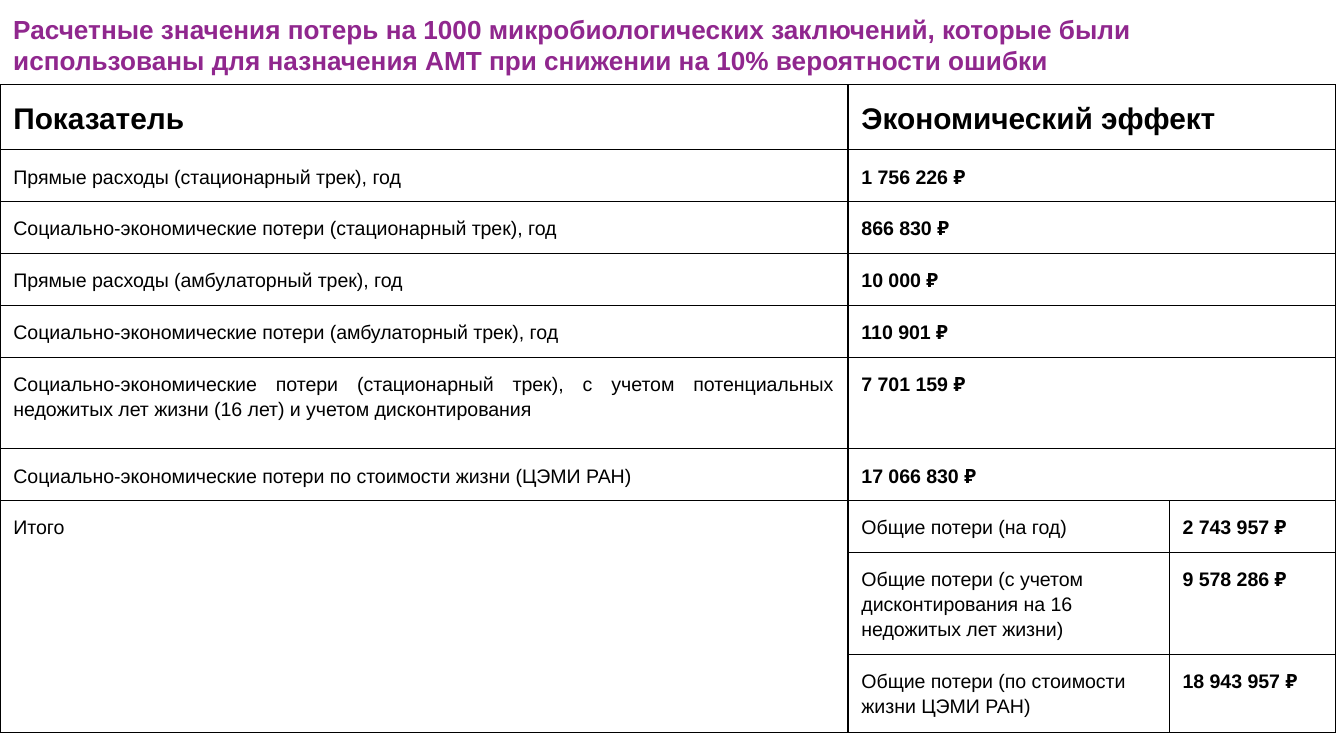
from lxml import etree
from pptx import Presentation
from pptx.dml.color import RGBColor
from pptx.enum import text
from pptx.oxml import ns
from pptx.util import Inches, Pt

PURPLE = RGBColor(0x90, 0x27, 0x8E)
BLACK = RGBColor(0, 0, 0)
FONT = "Arial"
INSET = Inches(0.1)
BORDER_WIDTH = Pt(0.75)
SLIDE_WIDTH = Inches(10)
SLIDE_HEIGHT = SLIDE_WIDTH * 9 // 16

TITLE = ("Расчетные значения потерь на 1000 микробиологических заключений, "
         "которые были использованы для назначения АМТ при снижении на 10% "
         "вероятности ошибки")
HEADINGS = ("Показатель", "Экономический эффект")
INDICATORS = [
    ("Прямые расходы (стационарный трек), год", "1 756 226 ₽"),
    ("Социально-экономические потери (стационарный трек), год", "866 830 ₽"),
    ("Прямые расходы (амбулаторный трек), год", "10 000 ₽"),
    ("Социально-экономические потери (амбулаторный трек), год", "110 901 ₽"),
    ("Социально-экономические потери (стационарный трек), с учетом "
     "потенциальных недожитых лет жизни (16 лет) и учетом дисконтирования",
     "7 701 159 ₽"),
    ("Социально-экономические потери по стоимости жизни (ЦЭМИ РАН)",
     "17 066 830 ₽"),
]
TOTALS = [
    ("Общие потери (на год)", "2 743 957 ₽"),
    ("Общие потери (с учетом дисконтирования на 16 недожитых лет жизни)",
     "9 578 286 ₽"),
    ("Общие потери (по стоимости жизни ЦЭМИ РАН)", "18 943 957 ₽"),
]
COLUMN_WIDTHS = [6.31, 2.39, 1.24]
ROW_HEIGHTS = [0.48] + [0.38] * 4 + [0.68] + [0.38] * 2 + [0.75, 0.58]


def write(frame, words, size=10.5, bold=False, color=BLACK,
          align=text.PP_ALIGN.LEFT, spacing=1.15):
    paragraph = frame.paragraphs[0]
    paragraph.alignment = align
    paragraph.line_spacing = spacing
    run = paragraph.add_run()
    run.text = words
    run.font.name = FONT
    run.font.size = Pt(size)
    run.font.bold = bold
    run.font.color.rgb = color


def set_insets(holder):
    holder.margin_left = holder.margin_right = INSET
    holder.margin_top = holder.margin_bottom = INSET


def add_borders(cell):
    properties = cell._tc.get_or_add_tcPr()
    for position, side in enumerate(("lnL", "lnR", "lnT", "lnB")):
        line = etree.Element(ns.qn(f"a:{side}"), w=str(BORDER_WIDTH))
        fill = etree.SubElement(line, ns.qn("a:solidFill"))
        etree.SubElement(fill, ns.qn("a:srgbClr"), val=str(BLACK))
        properties.insert(position, line)


def add_title(slide):
    title = slide.shapes.add_textbox(0, 0, Inches(9.95), Inches(0.67))
    title.text_frame.word_wrap = True
    title.text_frame.auto_size = text.MSO_AUTO_SIZE.SHAPE_TO_FIT_TEXT
    set_insets(title.text_frame)
    write(title.text_frame, TITLE, size=14, bold=True, color=PURPLE, spacing=1)


def add_grid(slide):
    losses = slide.shapes.add_table(
        len(ROW_HEIGHTS), len(COLUMN_WIDTHS), 0, Inches(0.63),
        Inches(sum(COLUMN_WIDTHS)), Inches(sum(ROW_HEIGHTS))).table
    losses.first_row = losses.horz_banding = False
    for column, width in zip(losses.columns, COLUMN_WIDTHS):
        column.width = Inches(width)
    for row, height in zip(losses.rows, ROW_HEIGHTS):
        row.height = Inches(height)
    for cell in losses.iter_cells():
        cell.fill.background()
        set_insets(cell)
        add_borders(cell)
    return losses


def fill_indicators(losses):
    for row, (indicator, effect) in enumerate([HEADINGS] + INDICATORS):
        heading = row == 0
        size = 16 if heading else 10.5
        losses.cell(row, 1).merge(losses.cell(row, 2))
        write(losses.cell(row, 0).text_frame, indicator, size=size,
              bold=heading, align=text.PP_ALIGN.JUSTIFY)
        write(losses.cell(row, 1).text_frame, effect, size=size, bold=True)


def fill_totals(losses):
    first = len(INDICATORS) + 1
    total = losses.cell(first, 0)
    total.merge(losses.cell(first + len(TOTALS) - 1, 0))
    write(total.text_frame, "Итого", align=text.PP_ALIGN.JUSTIFY)
    for row, (loss, amount) in enumerate(TOTALS, first):
        write(losses.cell(row, 1).text_frame, loss)
        write(losses.cell(row, 2).text_frame, amount, bold=True)


def main():
    deck = Presentation()
    deck.slide_width, deck.slide_height = SLIDE_WIDTH, SLIDE_HEIGHT
    slide = deck.slides.add_slide(deck.slide_layouts[6])
    losses = add_grid(slide)
    fill_indicators(losses)
    fill_totals(losses)
    add_title(slide)
    deck.save("out.pptx")


if __name__ == "__main__":
    main()
